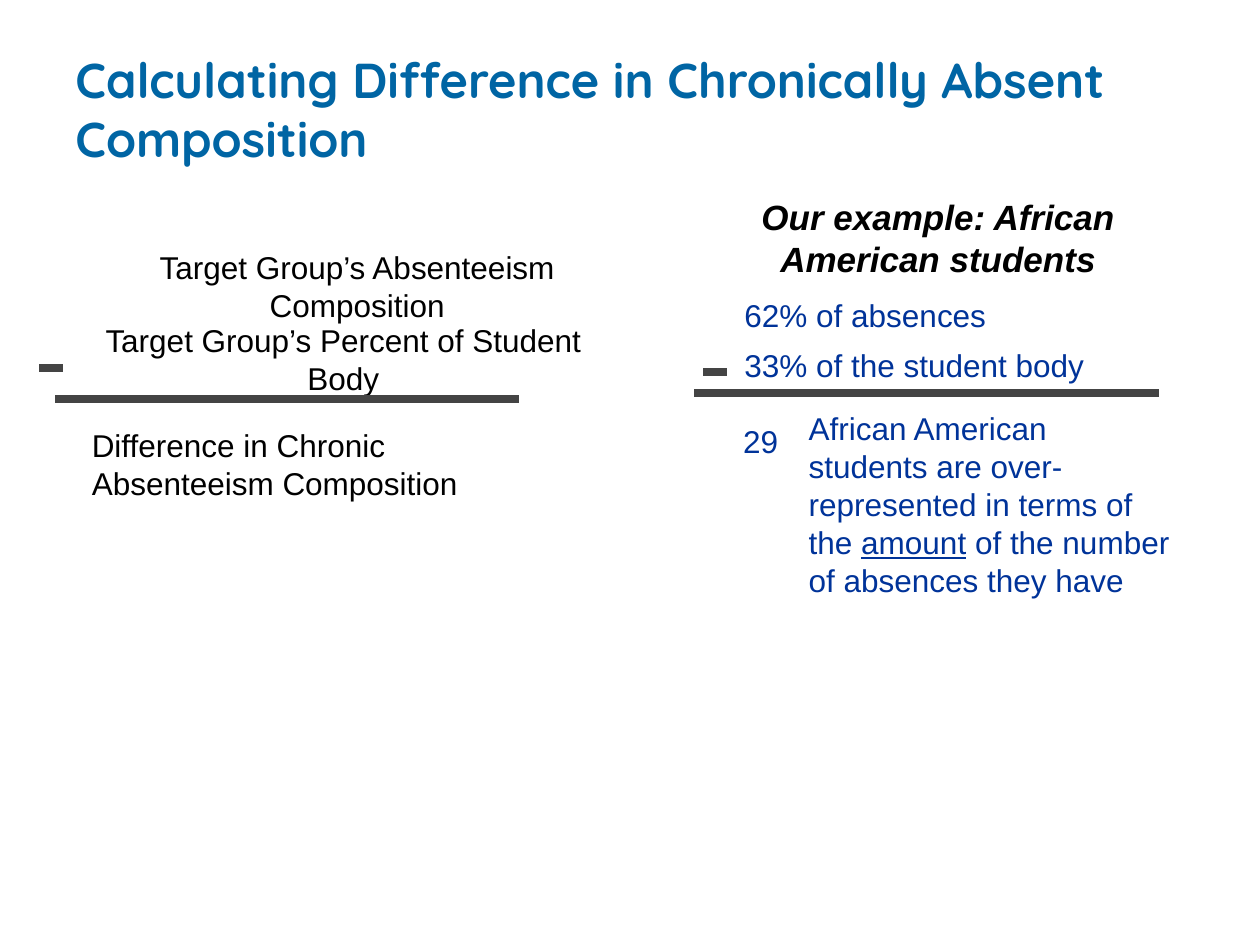
import pptx
import pptx.util
import pptx.dml.color
import pptx.enum.shapes
import pptx.enum.text
import pptx.oxml.ns
import lxml.etree

THEME = {
    "fonts": {"heading": "Quicksand", "body": "Arial"},
    "colors": {"title": "0065A4", "text": "000000", "example": "003399", "rule": "444444"},
    "sizes": {"title": 28, "heading": 20, "body": 18},
    "rule_width": 4.5,
}
# style: font, colour, size, bold, italic
STYLES = {
    "title": ("heading", "title", "title", True, False),
    "heading": ("body", "text", "heading", True, True),
    "formula": ("body", "text", "body", False, False),
    "example": ("body", "example", "body", False, False),
}
SLIDE_SIZE = (10, 7.5)
INDENT = 0.05  # share of slide width

# Positions are percentages of the slide: left, top, width, height
TITLE = ("title", (5, 4, 90, 14.93), "left",
         ["Calculating Difference in Chronically Absent Composition"])
FORMULA = [
    ("formula", (5, 25.6, 46.7, 9.47), "center", ["Target Group’s Absenteeism Composition"]),
    ("formula", (4.2, 33.33, 46.1, 9.47), "center", ["Target Group’s Percent of Student Body"]),
    ("formula", (6.3, 44.4, 33.8, 9.47), "left", ["Difference in Chronic Absenteeism Composition"]),
]
EXAMPLE = [
    ("heading", (52.9, 20, 43.1, 10.27), "center", ["Our example: African American students"]),
    ("example", (58.1, 30.67, 38.5, 5.33), "left", ["62% of absences"]),
    ("example", (58.1, 36, 33.8, 5.33), "left", ["33% of the student body"]),
    ("example", (58, 44, 6.2, 5.33), "left", ["29"]),
]
# Every second run is underlined
CONCLUSION = ("example", (58.2, 42.67, 35.6, 21.6), "left", [
    "African American students are over-represented in terms of the ",
    "amount",
    " of the number of absences they have",
])
# Left end, right end, height: minus sign and sum line of each calculation
RULES = [(3.1, 5, 38.93), (4.4, 41.2, 42.27), (55.8, 57.7, 39.33), (55.1, 92, 41.6)]


def across(percent):
    return pptx.util.Inches(SLIDE_SIZE[0] * percent / 100)


def down(percent):
    return pptx.util.Inches(SLIDE_SIZE[1] * percent / 100)


def add_text(page, style, place, align, runs):
    left, top, width, height = place
    box = page.shapes.add_textbox(across(left), down(top), across(width), down(height))
    box.text_frame.word_wrap = True
    para = box.text_frame.paragraphs[0]
    para.alignment = getattr(pptx.enum.text.PP_ALIGN, align.upper())
    font, color, size, bold, italic = STYLES[style]
    for index, words in enumerate(runs):
        span = para.add_run()
        span.text = words
        span.font.name = THEME["fonts"][font]
        span.font.size = pptx.util.Pt(THEME["sizes"][size])
        span.font.color.rgb = pptx.dml.color.RGBColor.from_string(THEME["colors"][color])
        span.font.bold = bold
        span.font.italic = italic
        span.font.underline = index % 2 == 1
    return box


def add_rule(page, start, end, height):
    rule = page.shapes.add_connector(pptx.enum.shapes.MSO_CONNECTOR.STRAIGHT,
                                     across(start), down(height), across(end), down(height))
    rule.line.color.rgb = pptx.dml.color.RGBColor.from_string(THEME["colors"]["rule"])
    rule.line.width = pptx.util.Pt(THEME["rule_width"])
    properties = rule.element.find(pptx.oxml.ns.qn("p:spPr"))
    lxml.etree.SubElement(properties, pptx.oxml.ns.qn("a:effectLst"))


def main():
    deck = pptx.Presentation()
    deck.slide_width, deck.slide_height = map(pptx.util.Inches, SLIDE_SIZE)
    page = deck.slides.add_slide(deck.slide_layouts[6])

    # Title
    title = add_text(page, *TITLE)
    title.text_frame.vertical_anchor = pptx.enum.text.MSO_ANCHOR.MIDDLE

    # General formula and worked example
    for item in FORMULA + EXAMPLE:
        add_text(page, *item).text_frame.auto_size = pptx.enum.text.MSO_AUTO_SIZE.SHAPE_TO_FIT_TEXT

    # Indented conclusion beside the result
    conclusion = add_text(page, *CONCLUSION)
    conclusion.text_frame.auto_size = pptx.enum.text.MSO_AUTO_SIZE.SHAPE_TO_FIT_TEXT
    para = conclusion.text_frame.paragraphs[0]
    para.level = 1
    margins = para._p.get_or_add_pPr()
    margins.set("marL", str(int(deck.slide_width * INDENT)))
    margins.set("indent", "0")

    # Minus signs and sum lines
    for rule in RULES:
        add_rule(page, *rule)

    deck.save("out.pptx")


if __name__ == "__main__":
    main()
